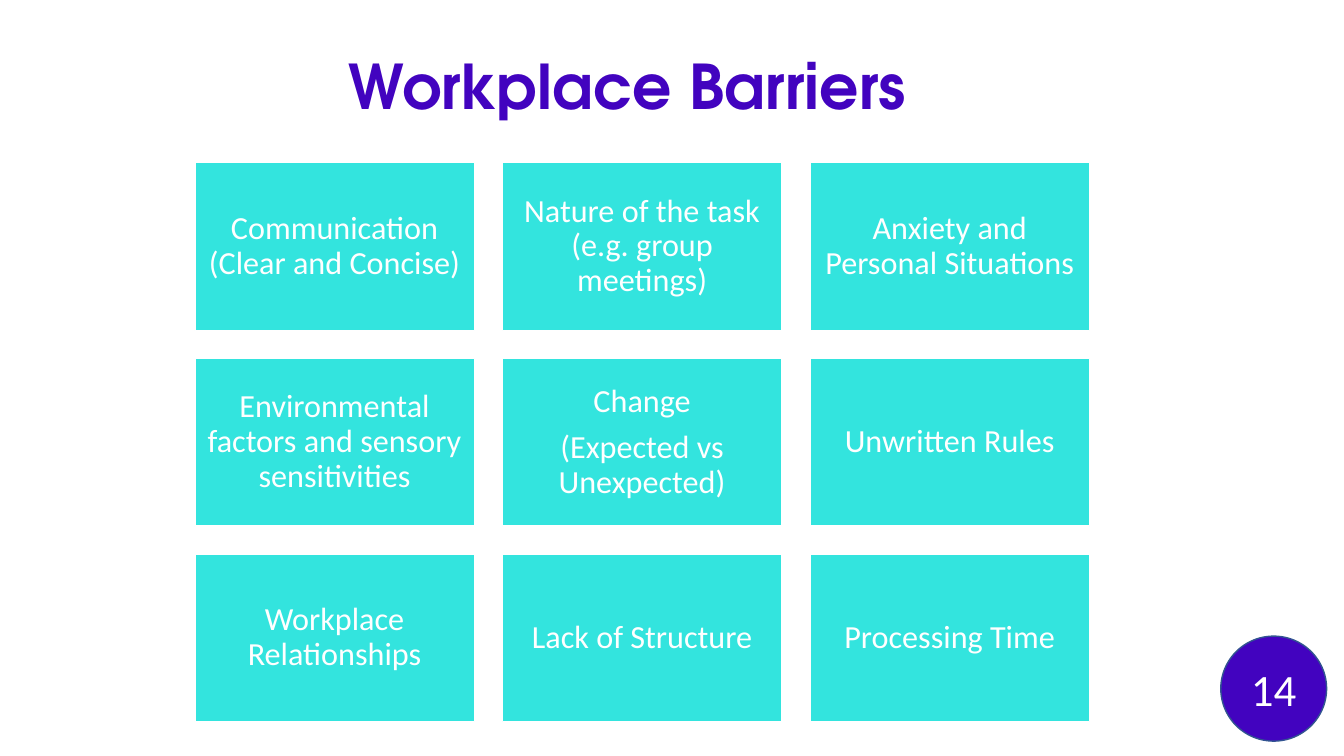
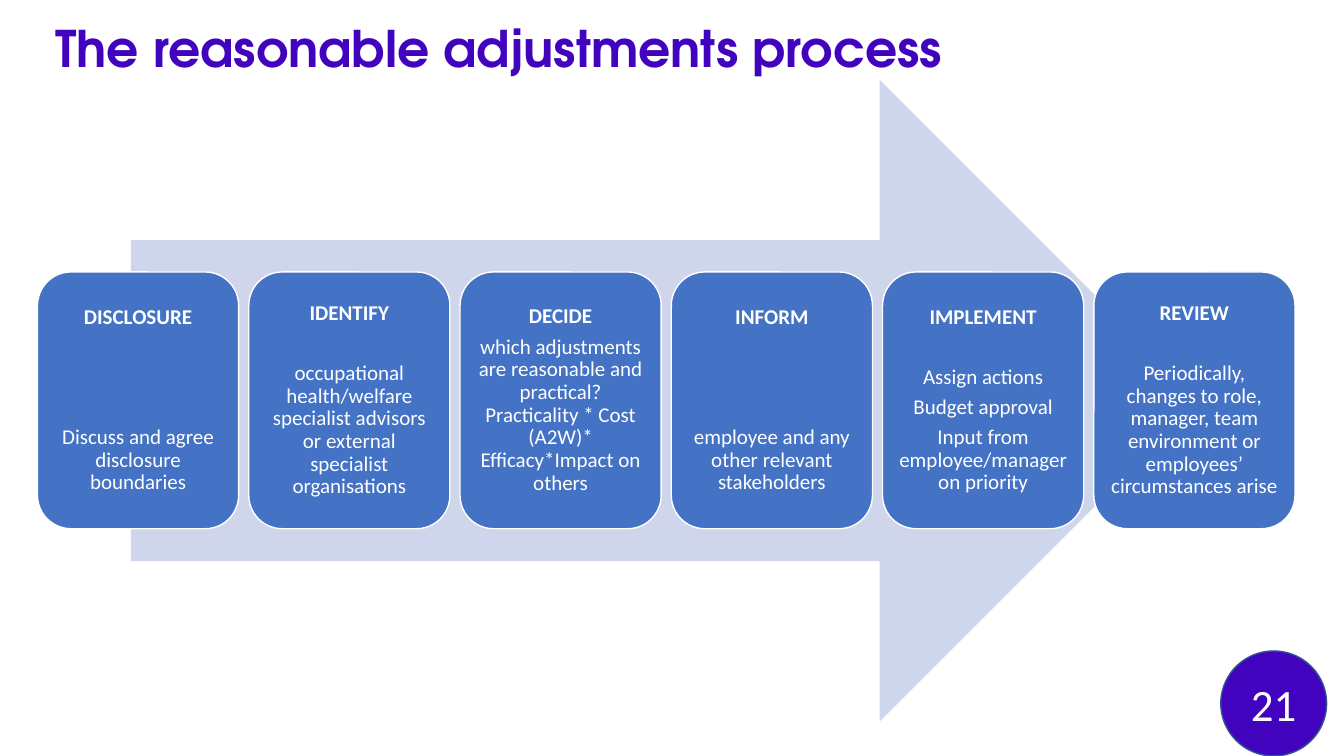
"""Build two slides: a grid of workplace barriers and the adjustments process."""
from pptx import Presentation
from pptx.dml.color import RGBColor
from pptx.enum.shapes import MSO_SHAPE as SHAPE
from pptx.enum.text import MSO_ANCHOR as ANCHOR, MSO_AUTO_SIZE as AUTO_SIZE, PP_ALIGN as ALIGN
from pptx.util import Pt

COLOURS = {
    "purple": "4203BF",
    "badge_line": "325491",
    "turquoise": "33E4DE",
    "blue": "4472C4",
    "pale_blue": "CFD5EA",
    "white": "FFFFFF",
}
TITLE_FONT = "TeX Gyre Adventor"
BODY_FONT = "Calibri"
SPACE_SHARE = 0.35

BARRIERS = [
    ["Communication (Clear and Concise)"],
    ["Nature of the task (e.g. group meetings)"],
    ["Anxiety and Personal Situations"],
    ["Environmental factors and sensory sensitivities"],
    ["Change", "(Expected vs Unexpected)"],
    ["Unwritten Rules"],
    ["Workplace Relationships"],
    ["Lack of Structure"],
    ["Processing Time"],
]
STEPS = [
    ("DISCLOSURE", 69.5, ["Discuss and agree disclosure boundaries"]),
    ("IDENTIFY", 26.6, ["occupational health/welfare specialist advisors "
                        "or external specialist organisations"]),
    ("DECIDE", 5.25, ["which adjustments are reasonable and practical? "
                      "Practicality * Cost (A2W)* Efficacy*Impact on others"]),
    ("INFORM", 69.5, ["employee and any other relevant stakeholders"]),
    ("IMPLEMENT", 26.6, ["Assign actions", "Budget approval",
                         "Input from employee/manager on priority"]),
    ("REVIEW", 26.6, ["Periodically, changes to role, manager, team environment "
                      "or employees’ circumstances arise"]),
]


def colour(name):
    return RGBColor.from_string(COLOURS[name])


def add_text(frame, text, font=BODY_FONT, size=15, fill="white", bold=False,
             align=ALIGN.CENTER, spacing=0.9, before=0):
    """Write a paragraph, using the empty first one when it is free."""
    first = frame.paragraphs[0]
    para = frame.add_paragraph() if first.runs else first
    para.alignment = align
    para.line_spacing = spacing
    para.space_before = Pt(before)
    para.space_after = Pt(0)
    span = para.add_run()
    span.text = text
    span.font.name = font
    span.font.size = Pt(size)
    span.font.bold = bold
    span.font.color.rgb = colour(fill)


def add_box(page, kind, left, top, width, height, fill, line=None, margin=7.2):
    box = page.shapes.add_shape(kind, Pt(left), Pt(top), Pt(width), Pt(height))
    box.shadow.inherit = False
    box.fill.solid()
    box.fill.fore_color.rgb = colour(fill)
    if line:
        box.line.color.rgb = colour(line)
        box.line.width = Pt(1)
    else:
        box.line.fill.background()
    frame = box.text_frame
    frame.word_wrap = True
    frame.vertical_anchor = ANCHOR.MIDDLE
    frame.margin_left = frame.margin_right = Pt(margin)
    frame.margin_top = frame.margin_bottom = Pt(margin)
    return box


def add_page(deck, title, size, left, top, width, height):
    page = deck.slides.add_slide(deck.slide_layouts[5])
    box = page.shapes.title
    box.left, box.top, box.width, box.height = Pt(left), Pt(top), Pt(width), Pt(height)
    frame = box.text_frame
    frame.word_wrap = True
    frame.auto_size = AUTO_SIZE.NONE
    frame.vertical_anchor = ANCHOR.TOP
    add_text(frame, title, font=TITLE_FONT, size=size, fill="purple", bold=True,
             align=ALIGN.LEFT)
    return page


def add_badge(page, number, top):
    badge = add_box(page, SHAPE.OVAL, 872, top, 75.6, 75, "purple", line="badge_line")
    add_text(badge.text_frame, number, size=32, spacing=1)


def build_barriers(deck):
    page = add_page(deck, "Workplace Barriers", 44, 242, 36.7, 521, 51)
    left, top, width, height, gap, columns = 139.2, 116.2, 199.7, 119.8, 20, 3
    size = 23
    for index, lines in enumerate(BARRIERS):
        row, column = divmod(index, columns)
        tile = add_box(page, SHAPE.RECTANGLE, left + column * (width + gap),
                       top + row * (height + gap), width, height,
                       "turquoise", line="white", margin=7)
        for position, text in enumerate(lines):
            add_text(tile.text_frame, text, size=size,
                     before=size * SPACE_SHARE if position else 0)
    add_badge(page, "14", 454.4)


def build_process(deck):
    page = add_page(deck, "The reasonable adjustments process", 36, 32.4, 13.7, 852, 73.4)
    add_box(page, SHAPE.RIGHT_ARROW, 93.6, 56.9, 764, 458.6, "pale_blue")
    left, top, width, height, gap = 26.8, 194.3, 143.7, 183.4, 7.2
    size = 15
    for index, (heading, heading_gap, lines) in enumerate(STEPS):
        card = add_box(page, SHAPE.ROUNDED_RECTANGLE, left + index * (width + gap),
                       top, width, height, "blue", line="white", margin=4.5)
        add_text(card.text_frame, heading, size=size, bold=True)
        for position, text in enumerate(lines):
            add_text(card.text_frame, text, size=size,
                     before=size * SPACE_SHARE if position else heading_gap)
    add_badge(page, "21", 465)


def main():
    deck = Presentation()
    deck.slide_width, deck.slide_height = Pt(960), Pt(540)
    build_barriers(deck)
    build_process(deck)
    deck.save("out.pptx")


if __name__ == "__main__":
    main()
